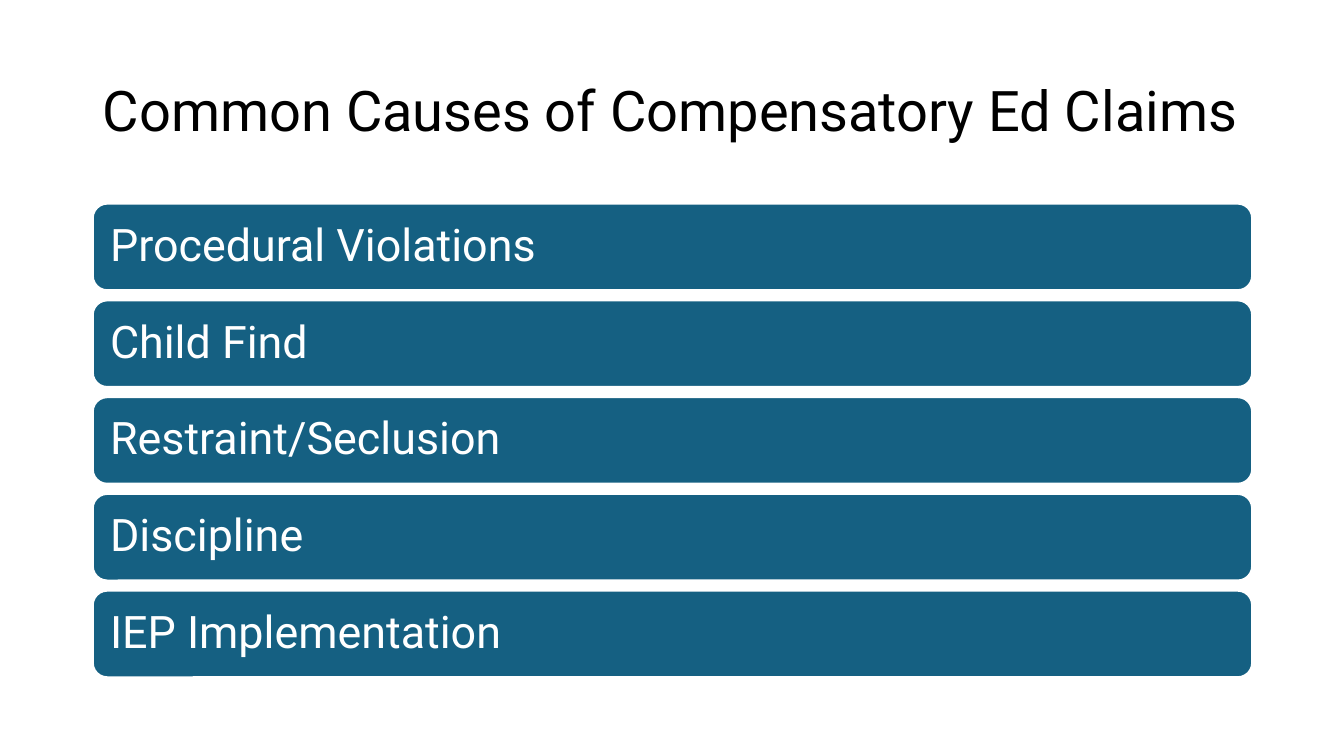
from pptx import Presentation
from pptx.dml.color import RGBColor
from pptx.enum.shapes import MSO_SHAPE
from pptx.enum.text import MSO_ANCHOR, MSO_AUTO_SIZE, PP_ALIGN
from pptx.util import Inches, Pt

COLORS = {"title": "000000", "bar": "156082", "white": "FFFFFF"}
CAUSES = [
    "Procedural Violations",
    "Child Find",
    "Restraint/Seclusion",
    "Discipline",
    "IEP Implementation",
]
LEFT, WIDTH = 0.92, 11.5
BAR_TOP, BAR_HEIGHT, BAR_GAP = 2.02, 0.86, 0.1


class SlideBuilder:
    """Holds the text style and the current slide."""

    def __init__(self, page, font_name="Roboto"):
        self.page = page
        self.font_name = font_name

    def set_text(self, box, text, size, color):
        frame = box.text_frame
        frame.text = text
        frame.word_wrap = True
        frame.auto_size = MSO_AUTO_SIZE.NONE
        frame.vertical_anchor = MSO_ANCHOR.MIDDLE
        para = frame.paragraphs[0]
        para.alignment = PP_ALIGN.LEFT
        para.line_spacing = 0.9
        para.font.name = self.font_name
        para.font.size = Pt(size)
        para.font.color.rgb = RGBColor.from_string(COLORS[color])
        return frame

    def title(self, text, top, height):
        box = self.page.shapes.title
        box.left, box.top = Inches(LEFT), Inches(top)
        box.width, box.height = Inches(WIDTH), Inches(height)
        self.set_text(box, text, 40, "title")

    def bar(self, text, top):
        box = self.page.shapes.add_shape(
            MSO_SHAPE.ROUNDED_RECTANGLE,
            Inches(LEFT), Inches(top), Inches(WIDTH), Inches(BAR_HEIGHT),
        )
        box.shadow.inherit = False
        box.fill.solid()
        box.fill.fore_color.rgb = RGBColor.from_string(COLORS["bar"])
        box.line.color.rgb = RGBColor.from_string(COLORS["white"])
        box.line.width = Pt(1.5)
        frame = self.set_text(box, text, 32, "white")
        frame.margin_left = frame.margin_right = Inches(0.13)
        frame.margin_top = frame.margin_bottom = Inches(0.13)


def main():
    deck = Presentation()
    deck.slide_width, deck.slide_height = Inches(13.33), Inches(7.5)
    title_only = deck.slide_layouts[5]
    builder = SlideBuilder(deck.slides.add_slide(title_only))

    # Heading
    builder.title("Common Causes of Compensatory Ed Claims", top=0.4, height=1.45)

    # Stack of causes
    for index, cause in enumerate(CAUSES):
        builder.bar(cause, BAR_TOP + index * (BAR_HEIGHT + BAR_GAP))

    deck.save("out.pptx")


if __name__ == "__main__":
    main()
